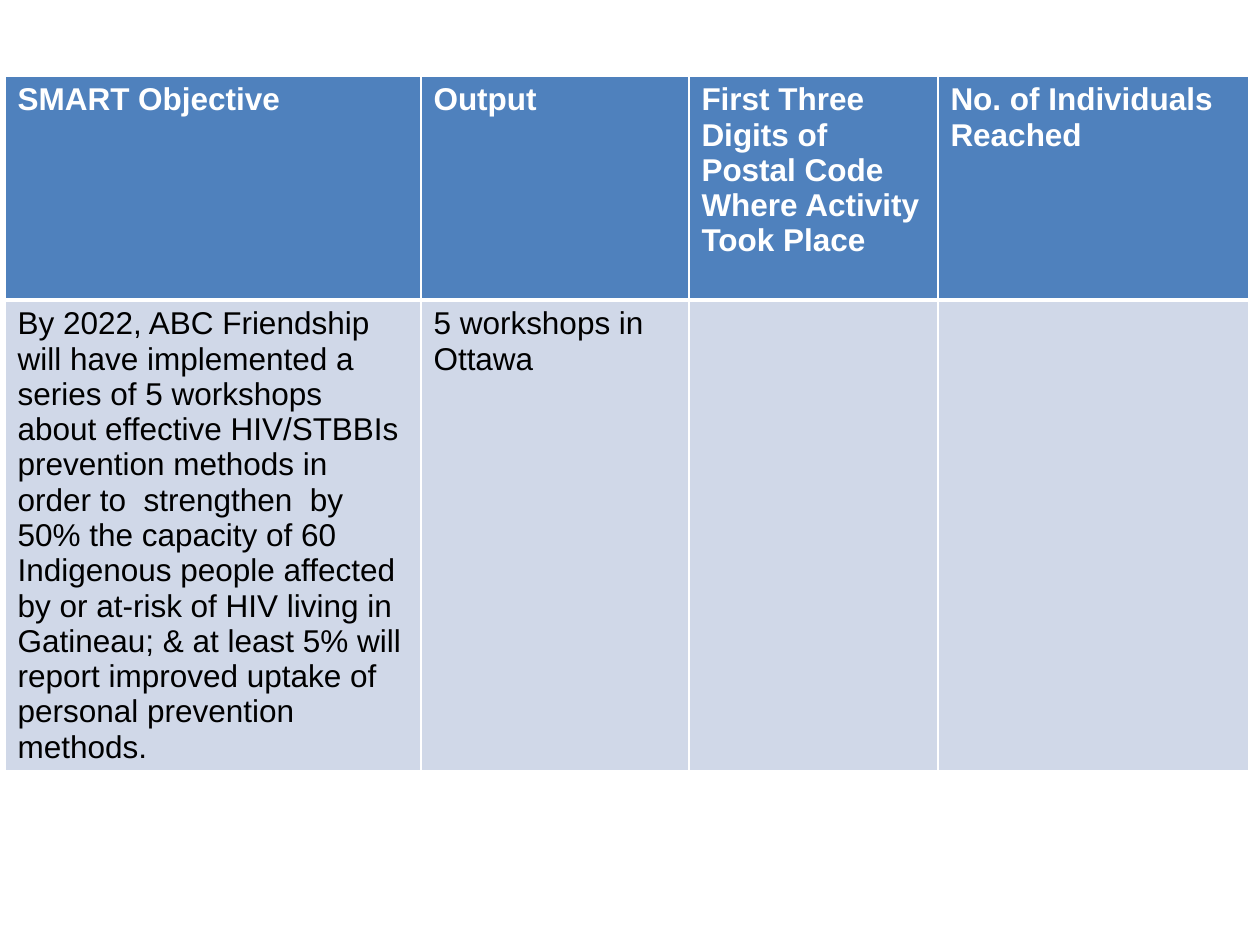
from lxml import etree
from pptx import Presentation, util as u
from pptx.dml.color import RGBColor
from pptx.oxml.ns import qn

PX = 914400 // 126  # EMU in one px
FONT = "Arial"
WHITE, BLACK, BLUE, PALE = "FFFFFF", "000000", "4F81BD", "D0D8E8"

HEADERS = ["SMART Objective", "Output",
           "First Three Digits of Postal Code Where Activity Took Place",
           "No. of Individuals Reached"]
OBJECTIVE = ("By 2022, ABC Friendship will have implemented a series of 5 workshops "
             "about effective HIV/STBBIs prevention methods in order to  strengthen  "
             "by 50% the capacity of 60 Indigenous people affected by or at-risk of HIV "
             "living in Gatineau; & at least 5% will report improved uptake of personal "
             "prevention methods.")
BODY = [OBJECTIVE, "5 workshops in Ottawa", "", ""]


def px(n):
    return u.Emu(n * PX)


def color(hex_string):
    return RGBColor.from_string(hex_string)


def set_borders(cell, bottom):
    """White borders, 1 pt except for the bottom one."""
    props = cell._tc.get_or_add_tcPr()
    widths = {"a:lnL": 1, "a:lnR": 1, "a:lnT": 1, "a:lnB": bottom}
    for i, (tag, width) in enumerate(widths.items()):
        line = etree.Element(qn(tag), w=str(u.Pt(width)))
        fill = etree.SubElement(line, qn("a:solidFill"))
        etree.SubElement(fill, qn("a:srgbClr"), val=WHITE)
        props.insert(i, line)


def fill_cell(cell, words, fill, ink, bold, bottom):
    cell.fill.solid()
    cell.fill.fore_color.rgb = color(fill)
    set_borders(cell, bottom)
    p = cell.text_frame.paragraphs[0]
    p.text = words
    p.font.size = u.Pt(18)
    for r in p.runs:
        r.font.name = FONT
        r.font.size = u.Pt(18)
        r.font.bold = bold
        r.font.color.rgb = color(ink)


def add_objectives_table(s, left, top, widths, heights):
    frame = s.shapes.add_table(len(heights), len(widths), px(left), px(top),
                               px(sum(widths)), px(sum(heights)))
    table = frame.table
    table.horz_banding = False
    for column, width in zip(table.columns, widths):
        column.width = px(width)
    for row, height in zip(table.rows, heights):
        row.height = px(height)

    # Header row, then the objective
    for i, (header, body) in enumerate(zip(HEADERS, BODY)):
        fill_cell(table.cell(0, i), header, BLUE, WHITE, True, 3)
        fill_cell(table.cell(1, i), body, PALE, BLACK, False, 1)
        set_top = table.cell(1, i)._tc.tcPr.find(qn("a:lnT"))
        set_top.set("w", str(u.Pt(3)))  # shared with the header's bottom edge


def main():
    prs = Presentation()
    prs.slide_width, prs.slide_height = u.Inches(10), u.Inches(7.5)
    s = prs.slides.add_slide(prs.slide_layouts[6])
    add_objectives_table(s, 5, 76, [416, 268, 249, 311], [224, 470])
    prs.save("out.pptx")


if __name__ == "__main__":
    main()
